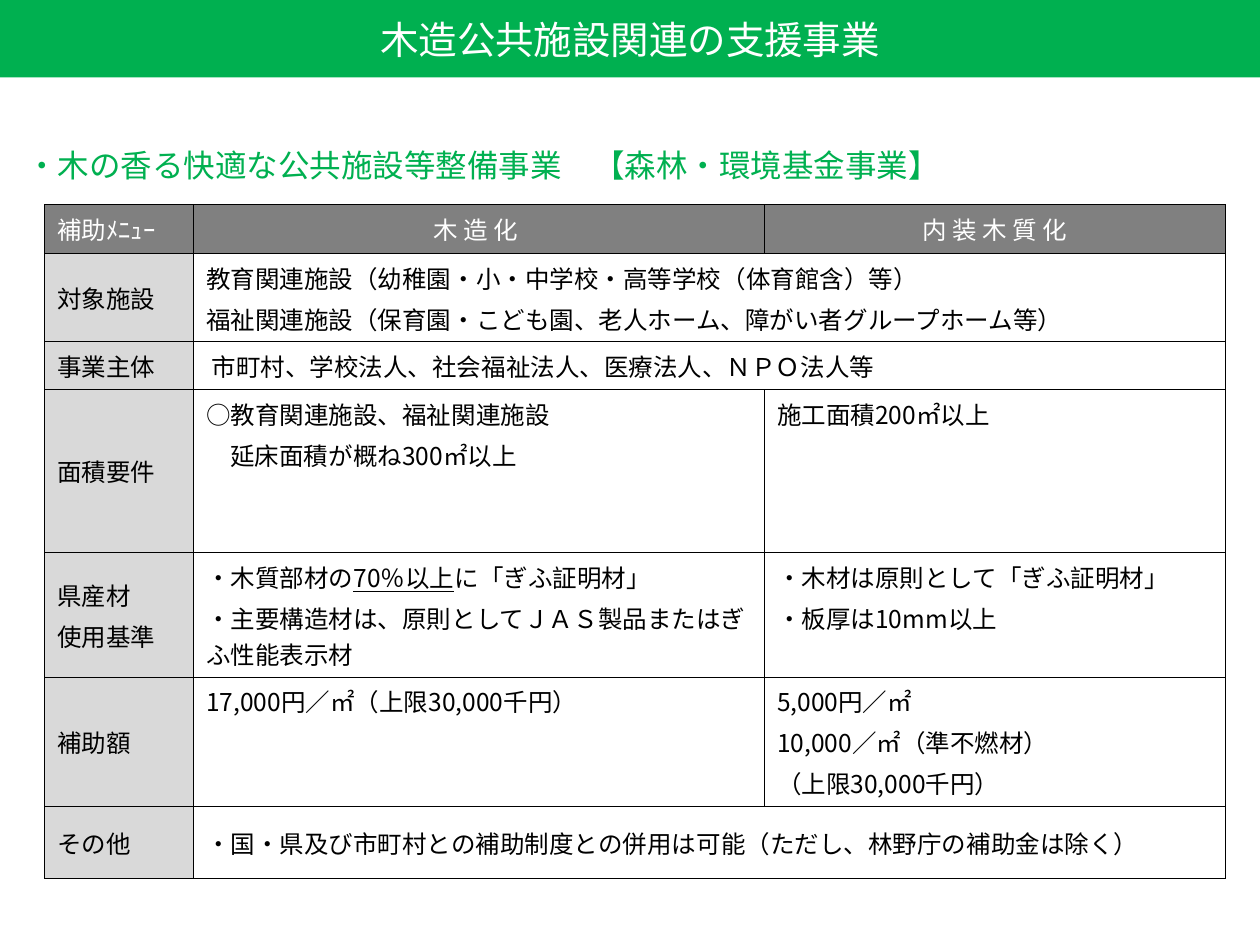
from dataclasses import dataclass

import pptx
import pptx.dml.color
import pptx.enum.shapes
import pptx.enum.text
import pptx.oxml.ns
import pptx.util
from lxml import etree

Cm = pptx.util.Cm
Pt = pptx.util.Pt
RGB = pptx.dml.color.RGBColor.from_string
ALIGN = pptx.enum.text.PP_ALIGN
ANCHOR = pptx.enum.text.MSO_ANCHOR
qn = pptx.oxml.ns.qn


@dataclass(frozen=True)
class Theme:
    font: str = "Noto Sans CJK JP"
    green: str = "00B050"
    white: str = "FFFFFF"
    black: str = "000000"
    header: str = "808080"
    label: str = "D9D9D9"
    title_size: int = 22
    heading_size: int = 18
    table_size: int = 14
    line_gap: float = 3
    border: float = 0.75


THEME = Theme()


@dataclass(frozen=True)
class Line:
    """A paragraph: plain text or (text, underlined) pieces, with a left indent in cm."""
    content: object
    indent: float = 0


COLUMNS = (3, 11.51, 9.29)
ROWS = (0.98, 1.78, 0.97, 3.28, 2.51, 2.61, 1.45)

HEADERS = ("補助ﾒﾆｭｰ", "木 造 化 ", "内 装 木 質 化")

# Label lines, then one list of lines per body cell; a single cell spans both columns.
BODY = [
    (["対象施設"], [["教育関連施設（幼稚園・小・中学校・高等学校（体育館含）等）",
                 "福祉関連施設（保育園・こども園、老人ホーム、障がい者グループホーム等）"]]),
    (["事業主体"], [[Line("市町村、学校法人、社会福祉法人、医療法人、ＮＰＯ法人等", 0.11)]]),
    (["面積要件"], [["○教育関連施設、福祉関連施設", Line("延床面積が概ね300㎡以上", 0.49)],
                ["施工面積200㎡以上"]]),
    (["県産材", "使用基準"], [[Line([("・木質部材の", False), ("70％以上", True),
                              ("に「ぎふ証明材」", False)]),
                        "・主要構造材は、原則としてＪＡＳ製品またはぎふ性能表示材"],
                       ["・木材は原則として「ぎふ証明材」", "・板厚は10mm以上"]]),
    (["補助額"], [["17,000円／㎡（上限30,000千円）"],
               ["5,000円／㎡", "10,000／㎡（準不燃材）", "（上限30,000千円）"]]),
    (["その他"], [["・国・県及び市町村との補助制度との併用は可能（ただし、林野庁の補助金は除く）"]]),
]


def write_text(frame, lines, size, color, align=ALIGN.LEFT):
    """Fill a text frame with one paragraph for each line."""
    frame.word_wrap = True
    for index, line in enumerate(lines):
        if isinstance(line, str):
            line = Line(line)
        paragraph = frame.add_paragraph() if index else frame.paragraphs[0]
        paragraph.alignment = align
        if index:
            paragraph.space_before = Pt(THEME.line_gap)
        if line.indent:
            paragraph._p.get_or_add_pPr().set("marL", str(Cm(line.indent)))
        pieces = [(line.content, False)] if isinstance(line.content, str) else line.content
        for text, underlined in pieces:
            run = paragraph.add_run()
            run.text = text
            run.font.size = Pt(size)
            run.font.name = THEME.font
            run.font.color.rgb = RGB(color)
            if underlined:
                run.font.underline = True
            east_asian = etree.Element(qn("a:ea"), typeface=THEME.font)
            run.font._element.find(qn("a:latin")).addnext(east_asian)


def set_borders(cell):
    """Draw a thin black line on each side of a cell."""
    properties = cell._tc.get_or_add_tcPr()
    for index, side in enumerate(("lnL", "lnR", "lnT", "lnB")):
        line = etree.Element(qn(f"a:{side}"), w=str(Pt(THEME.border)))
        fill = etree.SubElement(line, qn("a:solidFill"))
        etree.SubElement(fill, qn("a:srgbClr"), val=THEME.black)
        properties.insert(index, line)


def fill_cell(cell, lines, color=THEME.black, fill=None, anchor=ANCHOR.TOP, align=ALIGN.LEFT):
    write_text(cell.text_frame, lines, size=THEME.table_size, color=color, align=align)
    cell.vertical_anchor = anchor
    if fill:
        cell.fill.solid()
        cell.fill.fore_color.rgb = RGB(fill)
    else:
        cell.fill.background()


def add_title_band(slide, left, top, width, height):
    shape = slide.shapes.add_shape(pptx.enum.shapes.MSO_SHAPE.RECTANGLE, left, top, width, height)
    shape.shadow.inherit = False
    shape.fill.solid()
    shape.fill.fore_color.rgb = RGB(THEME.green)
    shape.line.fill.background()
    shape.text_frame.vertical_anchor = ANCHOR.MIDDLE
    write_text(shape.text_frame, ["木造公共施設関連の支援事業"],
               size=THEME.title_size, color=THEME.white, align=ALIGN.CENTER)


def add_heading(slide, left, top, width, height):
    box = slide.shapes.add_textbox(left, top, width, height)
    write_text(box.text_frame, ["・木の香る快適な公共施設等整備事業　【森林・環境基金事業】"],
               size=THEME.heading_size, color=THEME.green)


def add_support_table(slide, left, top, width, height):
    table = slide.shapes.add_table(len(ROWS), len(COLUMNS), left, top, width, height).table
    for column, size in zip(table.columns, COLUMNS):
        column.width = Cm(size)
    for row, size in zip(table.rows, ROWS):
        row.height = Cm(size)

    # Header row
    for index, text in enumerate(HEADERS):
        fill_cell(table.cell(0, index), [text], color=THEME.white, fill=THEME.header,
                  align=ALIGN.CENTER if index else ALIGN.LEFT)

    # Body rows
    for row, (label, contents) in enumerate(BODY, start=1):
        fill_cell(table.cell(row, 0), label, fill=THEME.label, anchor=ANCHOR.MIDDLE)
        if len(contents) == 1:
            table.cell(row, 1).merge(table.cell(row, 2))
        anchor = ANCHOR.MIDDLE if row == len(BODY) else ANCHOR.TOP
        for column, lines in enumerate(contents, start=1):
            fill_cell(table.cell(row, column), lines, anchor=anchor)

    for cell in table.iter_cells():
        set_borders(cell)


def main():
    presentation = pptx.Presentation()
    presentation.slide_width = Cm(25.4)
    presentation.slide_height = Cm(19.05)
    slide = presentation.slides.add_slide(presentation.slide_layouts[6])
    add_title_band(slide, 0, 0, presentation.slide_width, Cm(1.56))
    add_heading(slide, Cm(0.28), Cm(2.82), Cm(21.8), Cm(1.02))
    add_support_table(slide, Cm(0.9), Cm(4.13), Cm(sum(COLUMNS)), Cm(sum(ROWS)))
    presentation.save("out.pptx")


if __name__ == "__main__":
    main()
